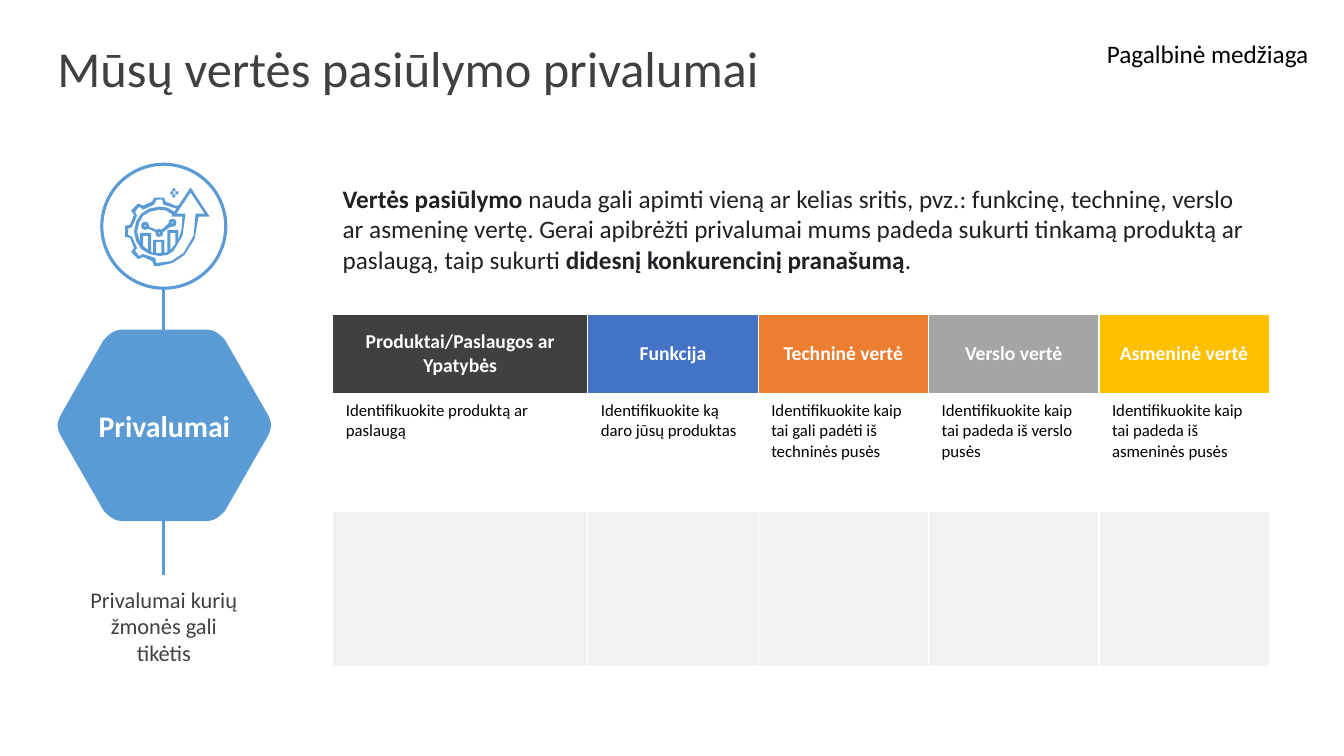
from lxml import etree
from pptx import Presentation
from pptx.dml.color import RGBColor
from pptx.enum.shapes import MSO_CONNECTOR as Link, MSO_SHAPE as Kind
from pptx.enum.text import MSO_ANCHOR as Anchor, PP_ALIGN as Align
from pptx.oxml.ns import qn
from pptx.util import Inches, Pt

HUE = {"blue": "5B9BD5", "dark": "404040", "ink": "202124", "black": "000000",
       "white": "FFFFFF", "pale": "F2F2F2", "royal": "4472C4",
       "orange": "ED7D31", "gray": "A5A5A5", "gold": "FFC000"}
FONT = "Calibri"

TITLE = "Mūsų vertės pasiūlymo privalumai"
TAG = "Pagalbinė medžiaga"
NAME = "Privalumai"
NOTE = "Privalumai kurių žmonės gali tikėtis"
INTRO = [
    ("Vertės pasiūlymo ", True),
    ("nauda gali apimti vieną ar kelias sritis, pvz.: funkcinę, techninę, verslo "
     "ar asmeninę vertę. Gerai apibrėžti privalumai mums padeda sukurti tinkamą "
     "produktą ar paslaugą, taip sukurti ", False),
    ("didesnį konkurencinį pranašumą", True),
    (".", False),
]
COLS = [
    ("Produktai/Paslaugos ar Ypatybės", "dark", 2.53,
     "Identifikuokite produktą ar paslaugą"),
    ("Funkcija", "royal", 1.69, "Identifikuokite ką daro jūsų produktas"),
    ("Techninė vertė", "orange", 1.69,
     "Identifikuokite kaip tai gali padėti iš techninės pusės"),
    ("Verslo vertė", "gray", 1.69, "Identifikuokite kaip tai padeda iš verslo pusės"),
    ("Asmeninė vertė", "gold", 1.69,
     "Identifikuokite kaip tai padeda iš asmeninės pusės"),
]
ROWS = [0.78, 1.17, 1.54]
PAD = (0.13, 0.07)

HEX_MID = (1.63, 4.22)
HEX_ARC = [(0.43, 0.95), (0.48, 0.94), (0.52, 0.92), (0.56, 0.89), (0.6, 0.85),
           (1.03, 0.1), (1.05, 0.05), (1.06, 0)]

GEAR = [
    [(1.97, 2.15), (2.08, 2.15), (1.89, 1.86), (1.77, 2.04), (1.74, 2.04), (1.64, 2),
     (1.63, 1.96), (1.53, 1.96), (1.51, 2), (1.42, 2.04), (1.37, 2.02), (1.3, 2.09),
     (1.33, 2.13), (1.29, 2.23), (1.24, 2.24), (1.24, 2.35), (1.29, 2.36),
     (1.33, 2.46), (1.3, 2.5), (1.37, 2.57), (1.42, 2.55), (1.51, 2.59),
     (1.53, 2.64), (1.57, 2.64), (1.71, 2.61), (1.83, 2.53), (1.93, 2.37)],
    [(1.55, 2.61), (1.54, 2.56), (1.42, 2.52), (1.38, 2.54), (1.34, 2.49),
     (1.36, 2.46), (1.31, 2.35), (1.27, 2.33), (1.27, 2.27), (1.31, 2.25),
     (1.36, 2.14), (1.34, 2.1), (1.38, 2.05), (1.42, 2.08), (1.53, 2.03),
     (1.55, 1.98), (1.61, 1.98), (1.62, 2.03), (1.75, 2.07), (1.73, 2.1),
     (1.66, 2.06), (1.58, 2.05), (1.48, 2.07), (1.4, 2.12), (1.35, 2.2), (1.33, 2.3),
     (1.35, 2.39), (1.4, 2.47), (1.48, 2.52), (1.58, 2.54), (1.66, 2.53),
     (1.72, 2.49), (1.81, 2.34), (1.84, 2.12), (1.75, 2.12), (1.89, 1.91),
     (2.03, 2.12), (1.94, 2.12), (1.92, 2.34), (1.82, 2.51), (1.7, 2.59)],
    [(1.66, 2.28), (1.66, 2.5), (1.63, 2.51), (1.63, 2.38), (1.52, 2.38),
     (1.52, 2.51), (1.5, 2.5), (1.5, 2.31), (1.39, 2.31), (1.39, 2.4), (1.36, 2.3),
     (1.38, 2.21), (1.42, 2.14), (1.49, 2.1), (1.58, 2.08), (1.65, 2.09),
     (1.71, 2.13), (1.7, 2.15), (1.81, 2.15), (1.8, 2.28), (1.77, 2.38), (1.77, 2.28)],
    [(1.74, 2.31), (1.74, 2.42), (1.69, 2.48), (1.69, 2.31)],
    [(1.6, 2.4), (1.6, 2.51), (1.55, 2.51), (1.55, 2.4)],
    [(1.47, 2.34), (1.47, 2.48), (1.42, 2.44), (1.42, 2.34)],
]
NODES = [(1.44, 2.24), (1.58, 2.31), (1.71, 2.21)]
TREND = [
    [(1.71, 2.17), (1.68, 2.18), (1.67, 2.22), (1.6, 2.28), (1.58, 2.27),
     (1.55, 2.28), (1.48, 2.25), (1.47, 2.21), (1.44, 2.2), (1.41, 2.21), (1.4, 2.24),
     (1.41, 2.27), (1.44, 2.28), (1.47, 2.27), (1.54, 2.3), (1.55, 2.34),
     (1.58, 2.35), (1.61, 2.34), (1.62, 2.3), (1.69, 2.25), (1.71, 2.25),
     (1.74, 2.24), (1.75, 2.21), (1.74, 2.18)],
] + [[(x - 0.01, y), (x, y - 0.01), (x + 0.01, y), (x, y + 0.01)] for x, y in NODES]
SPARKS = [(1.71, 1.87), (1.71, 1.93), (1.74, 1.9), (1.69, 1.9)]


def tint(name):
    return RGBColor.from_string(HUE[name])


def write(frame, text, size=18, color="black", bold=False, align=Align.LEFT,
          anchor=Anchor.TOP, pad=(0.1, 0.05), wrap=True, lead=None, after=None):
    frame.word_wrap = wrap
    frame.vertical_anchor = anchor
    frame.margin_left = frame.margin_right = Inches(pad[0])
    frame.margin_top = frame.margin_bottom = Inches(pad[1])
    para = frame.paragraphs[0]
    para.alignment = align
    para.line_spacing = lead
    para.space_after = after
    for part, heavy in [(text, bold)] if isinstance(text, str) else text:
        run = para.add_run()
        run.text = part
        run.font.name = FONT
        run.font.size = Pt(size)
        run.font.bold = heavy
        run.font.color.rgb = tint(color)


def label(slide, box, text, **form):
    shape = slide.shapes.add_textbox(*map(Inches, box))
    write(shape.text_frame, text, **form)


def paint(shape):
    shape.shadow.inherit = False
    shape.fill.solid()
    shape.fill.fore_color.rgb = tint("blue")
    shape.line.fill.background()
    return shape


def trace(shapes, loops):
    grid = [[(x * 100, y * 100) for x, y in loop] for loop in loops]
    pen = shapes.build_freeform(*grid[0][0], scale=Inches(0.01))
    pen.add_line_segments(grid[0][1:])
    for loop in grid[1:]:
        pen.move_to(*loop[0])
        pen.add_line_segments(loop[1:])
    return paint(pen.convert_to_shape())


def edge(cell):
    props = cell._tc.get_or_add_tcPr()
    for spot, side in enumerate(("lnL", "lnR", "lnT", "lnB")):
        line = etree.Element(qn("a:" + side), w=str(Pt(1)))
        fill = etree.SubElement(line, qn("a:solidFill"))
        etree.SubElement(fill, qn("a:srgbClr"), val=HUE["white"])
        props.insert(spot, line)


def draw_side(slide):
    stem = slide.shapes.add_connector(
        Link.STRAIGHT, *map(Inches, (1.62, 2.86, 1.62, 5.7)))
    etree.SubElement(stem._element.spPr, qn("a:effectLst"))
    ring = slide.shapes.add_shape(Kind.OVAL, *map(Inches, (1.01, 1.63, 1.23, 1.23)))
    ring.shadow.inherit = False
    ring.fill.background()
    for item in (stem, ring):
        item.line.color.rgb = tint("blue")
        item.line.width = Pt(2.25)
    label(slide, (0.83, 5.81, 1.59, 0.81), NOTE, size=16, color="dark",
          align=Align.CENTER, pad=(0, 0), after=Pt(10))

    hexa = []
    for h, v, step in ((1, -1, 1), (1, 1, -1), (-1, 1, 1), (-1, -1, -1)):
        hexa += [(HEX_MID[0] + h * x, HEX_MID[1] + v * y) for x, y in HEX_ARC[::step]]
    body = trace(slide.shapes, [hexa])
    write(body.text_frame, NAME, size=21.3, color="white", bold=True,
          align=Align.CENTER, anchor=Anchor.MIDDLE, pad=PAD)

    icon = slide.shapes.add_group_shape()
    for loops in (GEAR, TREND):
        trace(icon.shapes, loops)
    for x, y in SPARKS:
        paint(icon.shapes.add_shape(Kind.RECTANGLE, *map(Inches, (x, y, 0.03, 0.03))))


def draw_table(slide):
    table = slide.shapes.add_table(
        len(ROWS), len(COLS), *map(Inches, (3.3, 3.12, 9.28, sum(ROWS)))).table
    for row, tall in zip(table.rows, ROWS):
        row.height = Inches(tall)
    for c, (head, hue, wide, hint) in enumerate(COLS):
        table.columns[c].width = Inches(wide)
        for r, back in enumerate((hue, "white", "pale")):
            cell = table.cell(r, c)
            cell.fill.solid()
            cell.fill.fore_color.rgb = tint(back)
            cell.margin_left = cell.margin_right = Inches(PAD[0])
            cell.margin_top = cell.margin_bottom = Inches(PAD[1])
            edge(cell)
        top = table.cell(0, c)
        top.vertical_anchor = Anchor.MIDDLE
        write(top.text_frame, head, size=14, color="white", bold=True,
              align=Align.CENTER, pad=PAD)
        write(table.cell(1, c).text_frame, hint, size=12, pad=PAD)


def main():
    deck = Presentation()
    deck.slide_width, deck.slide_height = Inches(13.33), Inches(7.5)
    slide = deck.slides.add_slide(deck.slide_layouts[6])
    label(slide, (0.57, 0.41, 12.2, 0.6), TITLE, size=36, color="dark",
          anchor=Anchor.MIDDLE, pad=(0, 0), lead=0.9)
    draw_side(slide)
    draw_table(slide)
    label(slide, (3.3, 1.77, 9.28, 1.01), INTRO, color="ink")
    label(slide, (10.88, 0.33, 2.22, 0.4), TAG, wrap=False)
    deck.save("out.pptx")


if __name__ == "__main__":
    main()
